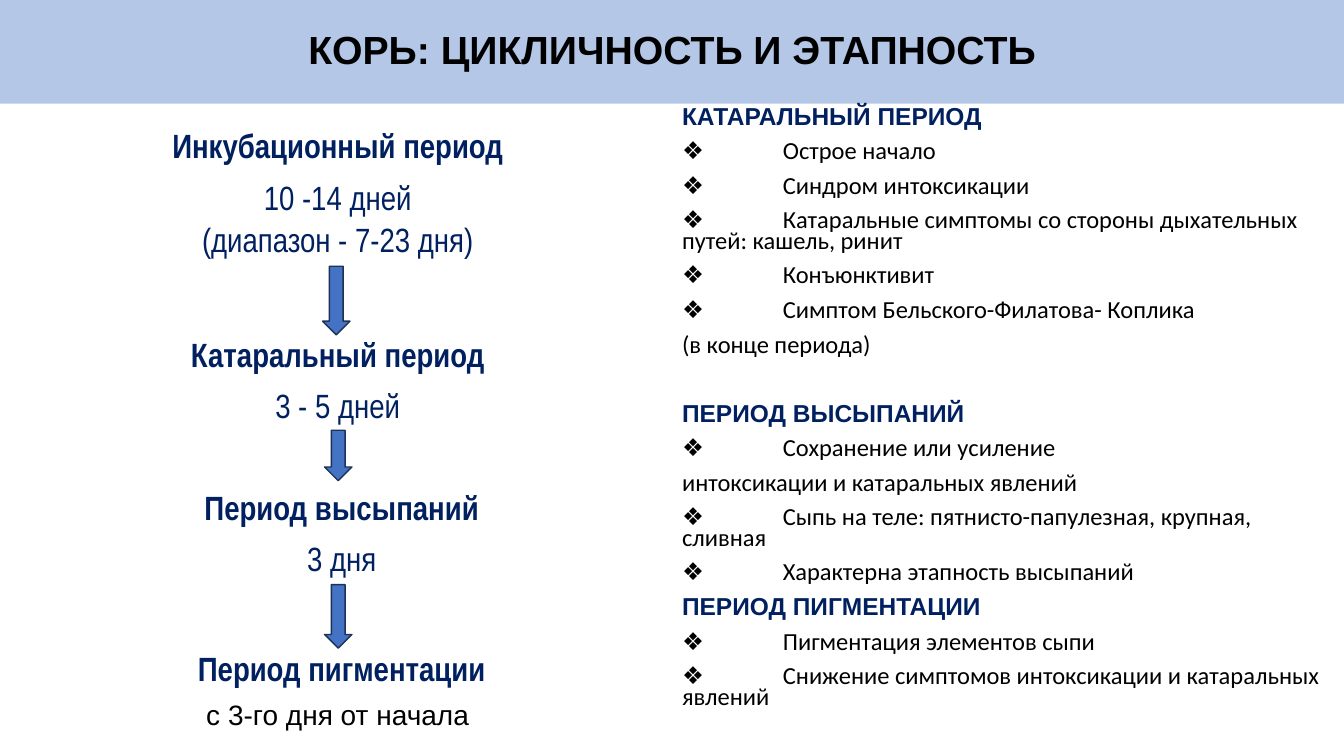
from lxml import etree
from pptx import Presentation
from pptx.dml.color import RGBColor
from pptx.enum.shapes import MSO_SHAPE
from pptx.enum.text import MSO_ANCHOR, MSO_AUTO_SIZE, PP_ALIGN
from pptx.oxml.ns import qn
from pptx.util import Pt

DOWN = MSO_SHAPE.DOWN_ARROW
MID, TOP = MSO_ANCHOR.MIDDLE, MSO_ANCHOR.TOP
CENTER, LEFT = PP_ALIGN.CENTER, PP_ALIGN.LEFT
FIXED = MSO_AUTO_SIZE.NONE

HEX = {"band": "B4C7E7", "navy": "002060", "black": "000000",
       "arrow": "4472C4", "edge": "1E3256"}

SIGNS = [
    ("КАТАРАЛЬНЫЙ ПЕРИОД", [
        "❖\tОстрое начало",
        "❖\tСиндром интоксикации",
        "❖\tКатаральные симптомы со стороны дыхательных путей: кашель, ринит",
        "❖\tКонъюнктивит",
        "❖\tСимптом Бельского-Филатова- Коплика",
        "(в конце периода)"], 0),
    ("ПЕРИОД ВЫСЫПАНИЙ", [
        "❖\tСохранение или усиление",
        "интоксикации и катаральных явлений",
        "❖\tСыпь на теле: пятнисто-папулезная, крупная, сливная",
        "❖\tХарактерна этапность высыпаний"], 34.6),
    ("ПЕРИОД ПИГМЕНТАЦИИ", [
        "❖\tПигментация элементов сыпи",
        "❖\tСнижение симптомов интоксикации и катаральных явлений"], 10),
]

EARLY = [("Инкубационный период", True, 7),
         ("10 -14 дней\n(диапазон - 7-23 дня)", False, 52),
         ("Катаральный период", True, 6),
         ("3 - 5 дней", False, 0)]
LATE = [("Период высыпаний", True, 6),
        ("3 дня", False, 49),
        ("Период пигментации", True, 6)]
ONSET = "с 3-го дня от начала "


def color(name):
    return RGBColor.from_string(HEX[name])


def place(shape, box):
    shape.left, shape.top, shape.width, shape.height = map(Pt, box)


def style(para, face, size, ink, bold):
    for run in para.runs:
        font = run.font
        font.name, font.size, font.bold = face, Pt(size), bold
        font.color.rgb = color(ink)


def add_para(frame, text):
    first = frame.paragraphs[0]
    para = first if not first.runs else frame.add_paragraph()
    para.text = text
    return para


def add_title(slide, box):
    title = slide.shapes.title
    place(title, box)
    title.fill.solid()
    title.fill.fore_color.rgb = color("band")
    frame = title.text_frame
    frame.text = "КОРЬ: ЦИКЛИЧНОСТЬ И ЭТАПНОСТЬ"
    frame.auto_size, frame.vertical_anchor = FIXED, MID
    para = frame.paragraphs[0]
    para.alignment, para.line_spacing = CENTER, 0.9
    style(para, "Arial", 28, "black", True)


def add_sign(frame, text, gap, head):
    para = add_para(frame, text)
    props = para._p.get_or_add_pPr()
    props.set("marL", "0")
    props.set("indent", "0")
    props.set("defTabSz", str(Pt(72)))
    etree.SubElement(props, qn("a:buNone"))
    para.alignment, para.line_spacing = LEFT, 0.7
    para.space_before = Pt(gap)
    if head:
        style(para, "Arial", 17.5, "navy", True)
    else:
        style(para, "Calibri", 17.5, "black", False)


def add_signs(slide, box):
    body = slide.placeholders[1]
    place(body, box)
    frame = body.text_frame
    frame.auto_size, frame.vertical_anchor = FIXED, TOP
    for head, items, gap in SIGNS:
        add_sign(frame, head, gap, True)
        for item in items:
            add_sign(frame, item, 10, False)


def add_steps(slide, box, steps):
    frame = slide.shapes.add_textbox(*map(Pt, box)).text_frame
    frame.word_wrap = True
    for text, bold, gap in steps:
        para = add_para(frame, text)
        para.alignment, para.line_spacing = CENTER, 1.05
        para.space_after = Pt(gap)
        style(para, "Arial Narrow", 24, "navy", bold)
    return frame


def add_arrow(slide, box):
    arrow = slide.shapes.add_shape(DOWN, *map(Pt, box))
    arrow.shadow.inherit = False
    arrow.fill.solid()
    arrow.fill.fore_color.rgb = color("arrow")
    arrow.line.color.rgb = color("edge")
    arrow.line.width = Pt(1)


def add_flow(slide, box):
    left, top, width, height = box
    add_steps(slide, (left + 30.3, top, 253.4, 223), EARLY)
    frame = add_steps(slide, (left, top + 258.5, width, height - 258.5), LATE)
    last = add_para(frame, ONSET)
    last.alignment = CENTER
    style(last, "Arial", 20, "black", False)
    for x, y, tall in ((146.2, 106, 49), (147.6, 223.2, 36), (147.6, 333.4, 45.4)):
        add_arrow(slide, (left + x, top + y, 19.6, tall))


def main():
    deck = Presentation()
    deck.slide_width, deck.slide_height = Pt(960), Pt(540)
    slide = deck.slides.add_slide(deck.slide_layouts[1])
    add_title(slide, (0, 0, 960, 74))
    add_signs(slide, (480, 74, 480, 466))
    add_flow(slide, (84.2, 84.2, 319.7, 448))
    deck.save("out.pptx")


if __name__ == "__main__":
    main()
